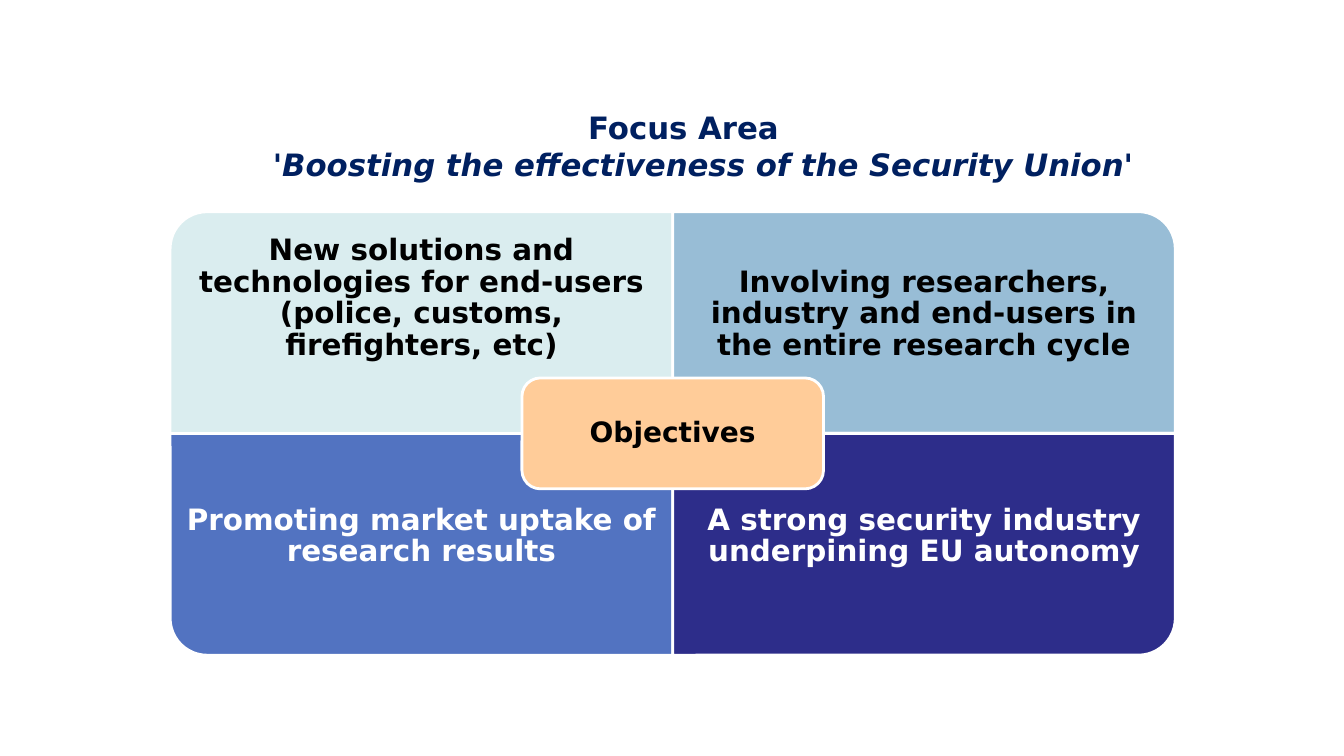
import pptx
import pptx.dml.color
import pptx.enum.shapes
import pptx.enum.text
import pptx.util

Pt = pptx.util.Pt
SHAPES = pptx.enum.shapes.MSO_SHAPE
ANCHOR = pptx.enum.text.MSO_ANCHOR

GRID_LEFT, GRID_TOP = 121.5, 151.2
CELL_WIDTH, CELL_HEIGHT = 359, 158.4
LABEL_HEIGHT = 118.8
HUB_WIDTH, HUB_HEIGHT = 215.4, 79.2

QUADRANTS = [
    (0, 0, 270, "DAEDEF", "000000",
     "New solutions and technologies for end-users (police, customs, firefighters, etc)"),
    (0, 1, 0, "98BDD6", "000000",
     "Involving researchers, industry and end-users in the entire research cycle"),
    (1, 0, 180, "5273C1", "FFFFFF", "Promoting market uptake of research results"),
    (1, 1, 90, "2D2D8A", "FFFFFF", "A strong security industry underpining EU autonomy"),
]


def rgb(value):
    """Return the colour for a hex string."""
    return pptx.dml.color.RGBColor.from_string(value)


def add_panel(slide, kind, left, top, width, height, fill):
    """Add a filled shape with a white outline."""
    panel = slide.shapes.add_shape(kind, Pt(left), Pt(top), Pt(width), Pt(height))
    panel.shadow.inherit = False
    panel.fill.solid()
    panel.fill.fore_color.rgb = rgb(fill)
    panel.line.color.rgb = rgb("FFFFFF")
    panel.line.width = Pt(2)
    return panel


def set_frame(frame, anchor, margins):
    """Set wrapping, anchor and margins, and return the centred first paragraph."""
    frame.word_wrap = True
    frame.vertical_anchor = anchor
    (frame.margin_left, frame.margin_top,
     frame.margin_right, frame.margin_bottom) = map(Pt, margins)
    paragraph = frame.paragraphs[0]
    paragraph.alignment = pptx.enum.text.PP_ALIGN.CENTER
    return paragraph


def add_run(paragraph, text, size, color, italic=False):
    """Add a bold run to a paragraph."""
    run = paragraph.add_run()
    run.text = text
    run.font.name = "DejaVu Sans"
    run.font.size = Pt(size)
    run.font.bold = True
    run.font.italic = italic
    run.font.color.rgb = rgb(color)


def add_title(slide):
    """Add the two-line heading with its hanging indent."""
    title = slide.shapes.add_textbox(Pt(31), Pt(94.3), Pt(914.4), Pt(45.4))
    heading = set_frame(title.text_frame, ANCHOR.MIDDLE, (7.2, 3.6, 7.2, 29.2))
    properties = heading._p.get_or_add_pPr()
    properties.set("marL", str(Pt(28)))
    properties.set("indent", str(Pt(-28)))
    add_run(heading, "Focus Area", 22, "002060")
    heading.add_line_break()
    add_run(heading, "'Boosting the effectiveness of the Security Union'", 22, "002060", True)


def add_quadrant(slide, row, column, rotation, fill, color, text):
    """Add one quadrant with its rounded outer corner and its label."""
    left = GRID_LEFT + column * CELL_WIDTH
    top = GRID_TOP + row * CELL_HEIGHT
    width, height = CELL_WIDTH, CELL_HEIGHT
    if rotation % 180:
        width, height = height, width
    panel = add_panel(slide, SHAPES.ROUND_1_RECTANGLE,
                      left + (CELL_WIDTH - width) / 2,
                      top + (CELL_HEIGHT - height) / 2, width, height, fill)
    panel.rotation = rotation

    label_top = top + row * (CELL_HEIGHT - LABEL_HEIGHT)
    label = slide.shapes.add_textbox(
        Pt(left), Pt(label_top), Pt(CELL_WIDTH), Pt(LABEL_HEIGHT))
    anchor = ANCHOR.TOP if row else ANCHOR.BOTTOM
    objective = set_frame(label.text_frame, anchor, (11.4,) * 4)
    objective.line_spacing = 0.9
    add_run(objective, text, 21, color)


def add_hub(slide):
    """Add the central box over the meeting point of the quadrants."""
    hub = add_panel(slide, SHAPES.ROUNDED_RECTANGLE,
                    GRID_LEFT + CELL_WIDTH - HUB_WIDTH / 2,
                    GRID_TOP + CELL_HEIGHT - HUB_HEIGHT / 2,
                    HUB_WIDTH, HUB_HEIGHT, "FFCC99")
    caption = set_frame(hub.text_frame, ANCHOR.MIDDLE, (6,) * 4)
    caption.line_spacing = 0.9
    add_run(caption, "Objectives", 20, "000000")


def main():
    """Build and save the slide."""
    deck = pptx.Presentation()
    deck.slide_width, deck.slide_height = Pt(960), Pt(540)
    slide = deck.slides.add_slide(deck.slide_layouts[6])
    for quadrant in QUADRANTS:
        add_quadrant(slide, *quadrant)
    add_hub(slide)
    add_title(slide)
    deck.save("out.pptx")


if __name__ == "__main__":
    main()
